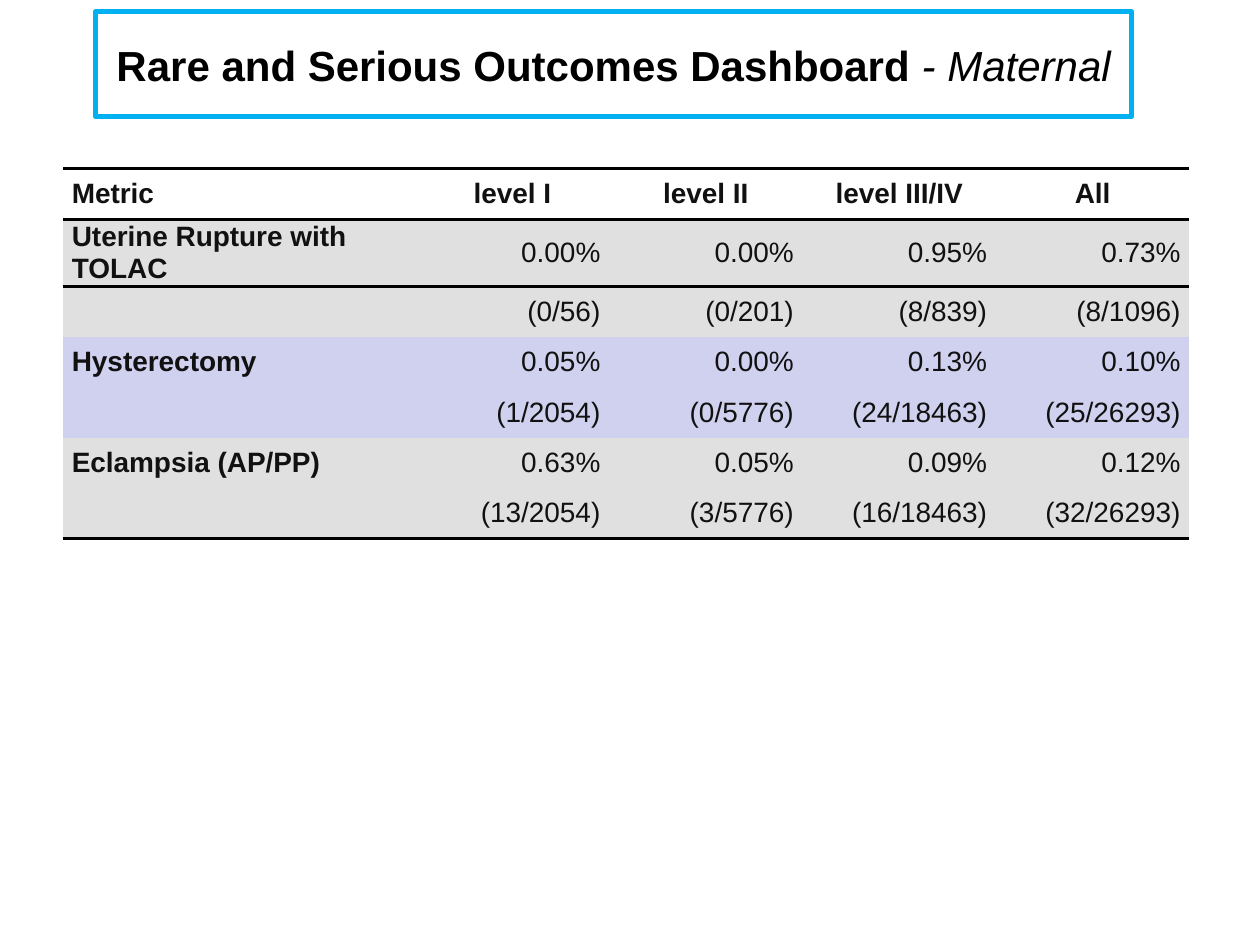
from lxml import etree
from pptx import Presentation
from pptx.dml.color import RGBColor
from pptx.enum.text import MSO_ANCHOR, MSO_AUTO_SIZE, PP_ALIGN
from pptx.oxml.ns import qn
from pptx.util import Inches, Pt

LEFT, MID, RIGHT = PP_ALIGN.LEFT, PP_ALIGN.CENTER, PP_ALIGN.RIGHT
CENTRE = MSO_ANCHOR.MIDDLE
GROW = MSO_AUTO_SIZE.SHAPE_TO_FIT_TEXT
NO_GRID = "{2D5ABB26-0587-4C30-8999-92F81FD0307C}"

THEME = {
    "font": "Arial", "head": 24, "body": 16,
    "black": "000000", "ink": "111111", "frame": "00B0F0",
    "bands": ["E0E0E0", "D0D0EF"],
}

# Table grid, in inches
COLS = [2.8] + [1.535] * 4
ROW = 0.4
PAD = Inches(0.07)

HEADS = ["Metric", "level I", "level II", "level III/IV", "All"]
METRICS = [
    ("Uterine Rupture with TOLAC",
     ["0.00%", "0.00%", "0.95%", "0.73%"],
     ["(0/56)", "(0/201)", "(8/839)", "(8/1096)"]),
    ("Hysterectomy",
     ["0.05%", "0.00%", "0.13%", "0.10%"],
     ["(1/2054)", "(0/5776)", "(24/18463)", "(25/26293)"]),
    ("Eclampsia (AP/PP)",
     ["0.63%", "0.05%", "0.09%", "0.12%"],
     ["(13/2054)", "(3/5776)", "(16/18463)", "(32/26293)"]),
]


def write(para, text, size, color, align=LEFT, bold=False, italic=False):
    para.alignment = align
    run = para.add_run()
    run.text = text
    font = run.font
    font.name, font.size = THEME["font"], Pt(size)
    font.bold, font.italic = bold, italic
    font.color.rgb = RGBColor.from_string(color)


def rule(cell, side, color, width=2):
    line = etree.SubElement(cell._tc.get_or_add_tcPr(), qn("a:ln" + side),
                            w=str(Pt(width)))
    fill = etree.SubElement(line, qn("a:solidFill"))
    etree.SubElement(fill, qn("a:srgbClr"), val=color)


deck = Presentation()
deck.slide_width, deck.slide_height = Inches(10), Inches(7.5)
slide = deck.slides.add_slide(deck.slide_layouts[5])

# Framed title
title = slide.shapes.title
title.left, title.top = Inches(0.76), Inches(0.26)
title.width, title.height = Inches(8.22), Inches(0.5)
title.line.color.rgb = RGBColor.from_string(THEME["frame"])
title.line.width = Pt(3)
frame = title.text_frame
frame.word_wrap, frame.auto_size = True, GROW
frame.vertical_anchor = CENTRE
para = frame.paragraphs[0]
for text, bold in [("Rare and Serious Outcomes Dashboard ", True),
                   ("- Maternal", False)]:
    write(para, text, THEME["head"], THEME["black"], align=MID,
          bold=bold, italic=not bold)

# Two table rows per metric: rates, then counts
rows = [HEADS]
for name, rates, counts in METRICS:
    rows += [[name] + rates, [""] + counts]

# Outcomes table
table = slide.shapes.add_table(
    len(rows), len(COLS), Inches(0.5), Inches(1.34),
    Inches(sum(COLS)), Inches(ROW * len(rows))).table
table.first_row = table.horz_banding = False
table._tbl.tblPr.find(qn("a:tableStyleId")).text = NO_GRID
for col, width in zip(table.columns, COLS):
    col.width = Inches(width)

for r, row in enumerate(rows):
    table.rows[r].height = Inches(ROW)
    for c, text in enumerate(row):
        cell = table.cell(r, c)
        cell.margin_left = cell.margin_right = 0
        cell.margin_top = cell.margin_bottom = 0
        cell.vertical_anchor = CENTRE

        # Rules around the header and under the last row
        if r < 2:
            rule(cell, "T", THEME["black"])
        if r in (0, len(rows) - 1):
            rule(cell, "B", THEME["black"])

        # One band colour per metric
        if r == 0:
            cell.fill.background()
        else:
            band = THEME["bands"][(r - 1) // 2 % 2]
            cell.fill.solid()
            cell.fill.fore_color.rgb = RGBColor.from_string(band)

        if text:
            para = cell.text_frame.paragraphs[0]
            para.space_before = para.space_after = Pt(2)
            props = para._p.get_or_add_pPr()
            for side in ("marL", "marR"):
                props.set(side, str(PAD))
            align = LEFT if c == 0 else MID if r == 0 else RIGHT
            write(para, text, THEME["body"], THEME["ink"], align=align,
                  bold=r == 0 or c == 0)

deck.save("out.pptx")
